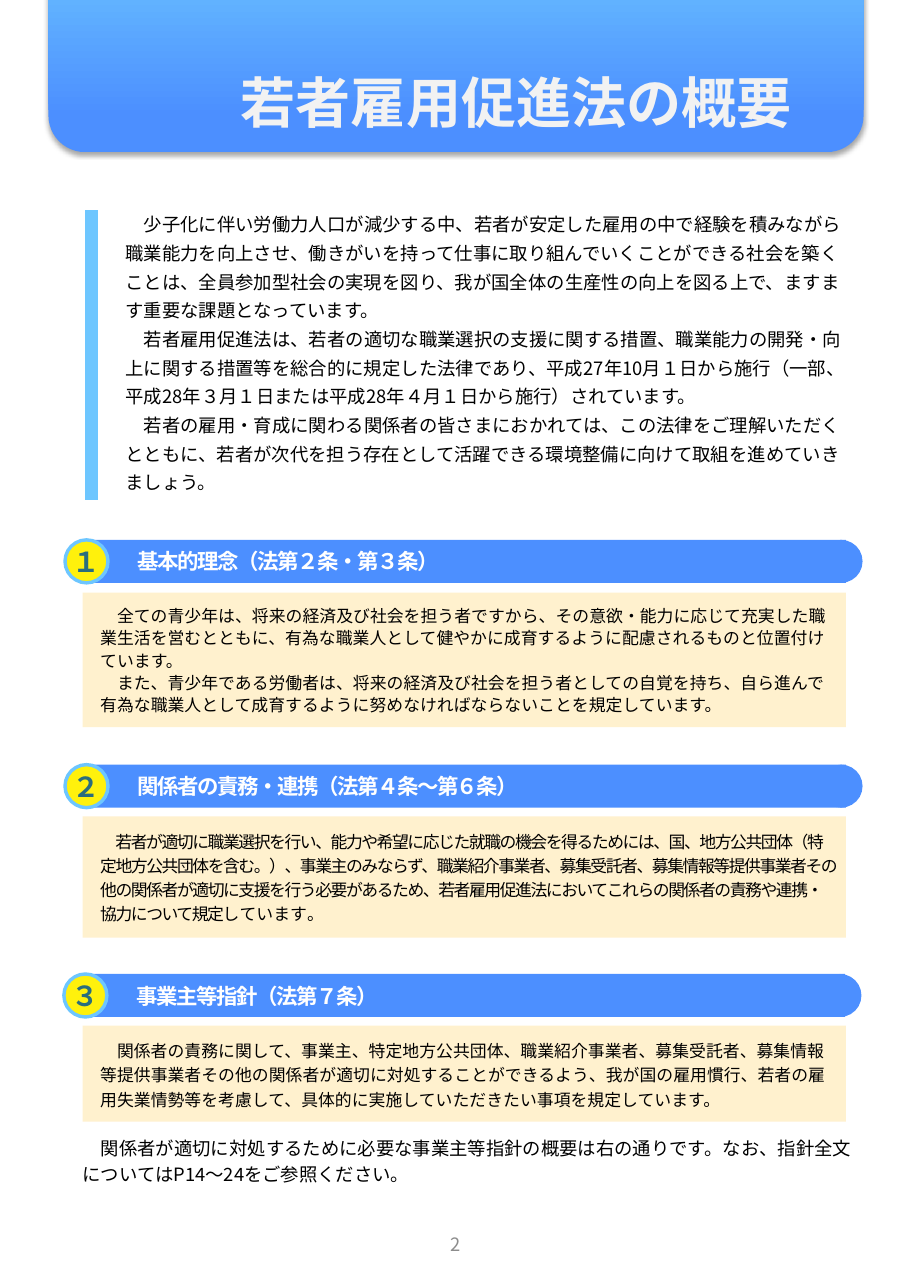
"""Builds the overview page of the youth employment promotion act."""
from lxml.etree import SubElement
from pptx import Presentation
from pptx.dml.color import RGBColor
from pptx.enum.lang import MSO_LANGUAGE_ID as Lang
from pptx.enum.shapes import MSO_CONNECTOR as Connector, MSO_SHAPE as Shape
from pptx.enum.text import MSO_ANCHOR as Anchor, PP_ALIGN as Align
from pptx.oxml.ns import qn
from pptx.util import Pt

PX = 9144
FONT = "Noto Sans CJK JP"
BLUE = RGBColor(0x4C, 0x8F, 0xFF)
SKY = RGBColor(0x6D, 0xC6, 0xFF)
CREAM = RGBColor(0xFF, 0xF1, 0xCE)
YELLOW = RGBColor(0xFF, 0xF1, 0x0C)
TEAL = RGBColor(0x2A, 0x6D, 0x7D)
BLACK = RGBColor(0, 0, 0)
WHITE = RGBColor(0xFF, 0xFF, 0xFF)
PALE = RGBColor(0xF2, 0xF2, 0xF2)
GRAY = RGBColor(0x8C, 0x8C, 0x8C)

INTRO = [
    "少子化に伴い労働力人口が減少する中、若者が安定した雇用の中で経験を積みながら職業能力を向上させ、働きがいを持って仕事に取り組んでいくことができる社会を築くことは、全員参加型社会の実現を図り、我が国全体の生産性の向上を図る上で、ますます重要な課題となっています。",
    "若者雇用促進法は、若者の適切な職業選択の支援に関する措置、職業能力の開発・向上に関する措置等を総合的に規定した法律であり、平成27年10月１日から施行（一部、平成28年３月１日または平成28年４月１日から施行）されています。",
    "若者の雇用・育成に関わる関係者の皆さまにおかれては、この法律をご理解いただくとともに、若者が次代を担う存在として活躍できる環境整備に向けて取組を進めていきましょう。",
]
PRINCIPLES = [
    "全ての青少年は、将来の経済及び社会を担う者ですから、その意欲・能力に応じて充実した職業生活を営むとともに、有為な職業人として健やかに成育するように配慮されるものと位置付けています。",
    "また、青少年である労働者は、将来の経済及び社会を担う者としての自覚を持ち、自ら進んで有為な職業人として成育するように努めなければならないことを規定しています。",
]
DUTIES = [(
    ("若者が適切に職業選択を行い、能力や希望に応じた就職の機会を得るためには、国、地方公共団体（特定地方公共団体を含む。）、事業主のみならず、職業紹介事業者、募集受託者、募集情報等提供事業者その他の関係者が適切に支援を行う必要があるため、若者雇用促進法においてこれらの関係者の責務や連携・協力について規定し", -1),
    ("ています", 0),
    ("。", -1),
)]
GUIDELINES = [
    "関係者の責務に関して、事業主、特定地方公共団体、職業紹介事業者、募集受託者、募集情報等提供事業者その他の関係者が適切に対処することができるよう、我が国の雇用慣行、若者の雇用失業情勢等を考慮して、具体的に実施していただきたい事項を規定しています。",
]
CLOSING = ["関係者が適切に対処するために必要な事業主等指針の概要は右の通りです。なお、指針全文についてはP14〜24をご参照ください。"]

SECTIONS = [
    ("１", "基本的理念（法第２条・第３条）", 79, 490, PRINCIPLES, 538, 122, 1.1, 11),
    ("２", "関係者の責務・連携（法第４条～第６条）", 79, 694, DUTIES, 741, 110, 1.2, 10),
    ("３", "事業主等指針（法第７条）", 78, 884, GUIDELINES, 931, 87, 1.2, 11),
]


def px(*lengths):
    """Turn px lengths into EMU."""
    return [length * PX for length in lengths]


def write(holder, paragraphs, *, size, color, bold=False, spacing=0, indent=0,
          line=1.0, align=Align.LEFT, anchor=Anchor.TOP, insets=(0, 5, 0, 5)):
    """Fill a shape with paragraphs of text or of (text, spacing) runs."""
    frame = holder.text_frame
    frame.word_wrap = True
    frame.vertical_anchor = anchor
    (frame.margin_left, frame.margin_top,
     frame.margin_right, frame.margin_bottom) = px(*insets)
    for number, content in enumerate(paragraphs):
        paragraph = frame.add_paragraph() if number else frame.paragraphs[0]
        paragraph.alignment = align
        paragraph.line_spacing = line
        paragraph._p.get_or_add_pPr().set("indent", str(Pt(indent)))
        runs = ((content, spacing),) if isinstance(content, str) else content
        for words, gap in runs:
            run = paragraph.add_run()
            run.text = words
            font = run.font
            font.size, font.bold, font.name = Pt(size), bold, FONT
            font.color.rgb = color
            font.language_id = Lang.JAPANESE
            properties = run._r.get_or_add_rPr()
            properties.set("spc", str(gap * 100))
            SubElement(properties, qn("a:ea"), typeface=FONT)


def add_text(slide, box, paragraphs, **style):
    """Add a text box."""
    write(slide.shapes.add_textbox(*px(*box)), paragraphs, **style)


def add_block(slide, kind, box, fill, outline=None):
    """Add a flat shape in one colour."""
    block = slide.shapes.add_shape(kind, *px(*box))
    block.shadow.inherit = False
    block.fill.solid()
    block.fill.fore_color.rgb = fill
    if outline is None:
        block.line.fill.background()
    else:
        block.line.color.rgb = outline
        block.line.width = Pt(2.25)
    return block


def add_banner(slide):
    """Add the title banner with its gradient and soft shadow."""
    banner = add_block(slide, Shape.ROUNDED_RECTANGLE, (44, -61, 740, 199), BLUE)
    banner.fill.gradient()
    banner.fill.gradient_angle = 90
    for stop, position, color in zip(banner.fill.gradient_stops, (0.16, 1), (BLUE, SKY)):
        stop.position = position
        stop.color.rgb = color
    effects = banner._element.spPr.find(qn("a:effectLst"))
    shadow = SubElement(effects, qn("a:outerShdw"), blurRad=str(Pt(3.1)),
                        dist=str(Pt(1.8)), dir="5400000", rotWithShape="0")
    shade = SubElement(shadow, qn("a:srgbClr"), val="000000")
    SubElement(shade, qn("a:alpha"), val="35000")
    add_text(slide, (76, 57, 685, 71), ["若者雇用促進法の概要"], size=36, color=PALE,
             bold=True, align=Align.CENTER, insets=(110, 5, 10, 5))


def add_rule(slide, x, top, bottom):
    """Add the thick vertical rule beside the introduction."""
    rule = slide.shapes.add_connector(Connector.STRAIGHT, *px(x, top, x, bottom))
    rule.line.color.rgb = SKY
    rule.line.width = Pt(8)
    SubElement(rule._element.spPr, qn("a:effectLst"))


def add_section(slide, numeral, heading, left, top, body, body_top, body_height, line, indent):
    """Add a numbered heading bar and the panel under it."""
    bar = add_block(slide, Shape.RECTANGLE, (left, top, 689, 39), BLUE)
    write(bar, [heading], size=14, color=WHITE, bold=True, spacing=-1,
          anchor=Anchor.MIDDLE, insets=(46, 5, 10, 5))
    add_block(slide, Shape.OVAL, (left + 665, top, 39, 39), BLUE)
    badge = add_block(slide, Shape.OVAL, (left - 20, top, 39, 39), YELLOW, SKY)
    write(badge, [numeral], size=18, color=TEAL, bold=True, align=Align.CENTER,
          anchor=Anchor.MIDDLE, insets=(0, 0, 0, 0))
    panel = add_block(slide, Shape.RECTANGLE, (75, body_top, 693, body_height), CREAM)
    write(panel, body, size=11, color=BLACK, line=line, indent=indent,
          insets=(16, 10, 8, 10))


def main():
    """Build and save the page."""
    deck = Presentation()
    deck.slide_width, deck.slide_height = px(827, 1169)
    slide = deck.slides.add_slide(deck.slide_layouts[6])
    add_banner(slide)
    add_rule(slide, 83, 191, 454)
    add_text(slide, (114, 183, 661, 272), INTRO, size=12, color=BLACK, line=1.3, indent=12)
    for section in SECTIONS:
        add_section(slide, *section)
    add_text(slide, (75, 1023, 708, 59), CLOSING, size=12, color=BLACK, line=1.2, indent=12)
    add_text(slide, (326, 1092, 175, 75), ["2"], size=12, color=GRAY,
             align=Align.CENTER, anchor=Anchor.MIDDLE)
    deck.save("out.pptx")


if __name__ == "__main__":
    main()
